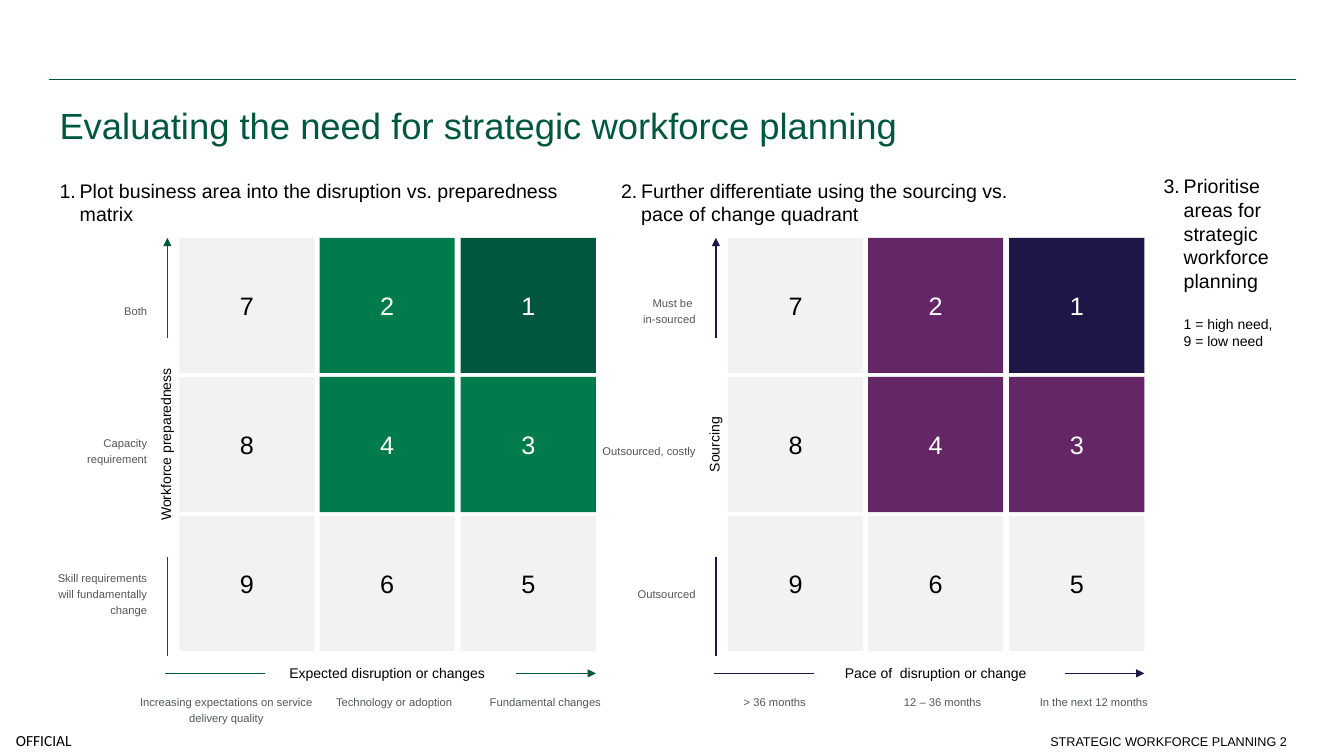
from lxml import etree
from pptx import Presentation, util as u
from pptx.dml.color import RGBColor
from pptx.enum import shapes, text
from pptx.oxml.ns import qn

PX = 9144  # 100 px to the inch
COLOURS = {
    "forest": "00573F", "green": "007B4B", "navy": "201547", "purple": "642667",
    "pale": "F2F2F2", "grey": "53565A", "black": "000000", "white": "FFFFFF",
}
LEFT, CENTRE, RIGHT = text.PP_ALIGN.LEFT, text.PP_ALIGN.CENTER, text.PP_ALIGN.RIGHT
TOP, MIDDLE, BOTTOM = text.MSO_ANCHOR.TOP, text.MSO_ANCHOR.MIDDLE, text.MSO_ANCHOR.BOTTOM


def px(*lengths):
    return [u.Emu(length * PX) for length in lengths]


def colour(name):
    return RGBColor.from_string(COLOURS[name])


def write(paragraph, words, size=10, ink="black", align=LEFT, font="Arial",
          spacing=None, before=None, after=None, indent=None, number=None):
    """Fill a paragraph; indent is in px, number starts a numbered list."""
    paragraph.text = words
    paragraph.alignment = align
    if spacing:
        paragraph.line_spacing = spacing
    if before:
        paragraph.space_before = u.Pt(before)
    if after:
        paragraph.space_after = u.Pt(after)
    properties = paragraph._p.get_or_add_pPr()
    if indent:
        properties.set("marL", str(indent * PX))
        properties.set("indent", str(-indent * PX if number else 0))
    if number:
        etree.SubElement(properties, qn("a:buAutoNum"),
                         type="arabicPeriod", startAt=str(number))
    for run in paragraph.runs:
        run.font.size = u.Pt(size)
        run.font.name = font
        run.font.color.rgb = colour(ink)
    for line_break in paragraph._p.findall(qn("a:br")):
        etree.SubElement(line_break, qn("a:rPr"), sz=str(size * 100))


class Board:
    """Holds the current slide and the place where new elements go."""

    def __init__(self, presentation):
        self.slide = presentation.slides.add_slide(presentation.slide_layouts[5])
        self.target = self.slide.shapes

    def start_group(self):
        self.target = self.slide.shapes.add_group_shape().shapes

    def end_group(self):
        self.target = self.slide.shapes

    def title(self, words, box, **style):
        shape = self.slide.shapes.title
        shape.left, shape.top, shape.width, shape.height = px(*box)
        shape.text_frame.auto_size = text.MSO_AUTO_SIZE.NONE
        shape.text_frame.vertical_anchor = TOP
        write(shape.text_frame.paragraphs[0], words, **style)

    def label(self, words, box, anchor=TOP, rotation=0, wrap=True, inset=0, **style):
        shape = self.target.add_textbox(*px(*box))
        shape.rotation = rotation
        frame = shape.text_frame
        frame.word_wrap = wrap
        frame.vertical_anchor = anchor
        frame.margin_left = frame.margin_right = u.Emu(inset * PX)
        frame.margin_top = frame.margin_bottom = u.Emu(inset * PX // 2)
        write(frame.paragraphs[0], words, **style)
        return frame

    def cell(self, words, box, fill, ink):
        shape = self.target.add_shape(shapes.MSO_SHAPE.RECTANGLE, *px(*box))
        shape.shadow.inherit = False
        shape.fill.solid()
        shape.fill.fore_color.rgb = colour(fill)
        shape.line.fill.background()
        shape.text_frame.vertical_anchor = MIDDLE
        write(shape.text_frame.paragraphs[0], words, size=18, ink=ink, align=CENTRE)

    def line(self, ends, ink, arrow=False):
        connector = self.target.add_connector(shapes.MSO_CONNECTOR.STRAIGHT, *px(*ends))
        connector.line.color.rgb = colour(ink)
        connector.line.width = u.Pt(1)
        if arrow:
            etree.SubElement(connector.line._get_or_add_ln(), qn("a:tailEnd"), type="triangle")
        etree.SubElement(connector._element.spPr, qn("a:effectLst"))

    def matrix(self, x, top_fill, mid_fill, axis_ink, y_title, x_title, rows, columns):
        """Draw a three by three matrix with axes; x shifts it to the right."""
        self.start_group()
        # Cells
        for row, ranks in enumerate(("721", "843", "965")):
            for column, rank in enumerate(ranks):
                fill = top_fill if rank == "1" else mid_fill if rank in "234" else "pale"
                box = (x + 178 + column * 279 // 2, 236 + row * 138, 134, 134)
                self.cell(rank, box, fill, "black" if fill == "pale" else "white")
        # Axes
        self.line((x + 166, 335, x + 166, 236), axis_ink, arrow=True)
        self.line((x + 166, 651, x + 166, 553), axis_ink)
        self.line((x + 512, 668, x + 591, 668), axis_ink, arrow=True)
        self.line((x + 164, 668, x + 263, 668), axis_ink)
        axis_style = dict(align=CENTRE, spacing=1.2)
        self.label(y_title, (x + 66, 429, 197, 24), rotation=270, **axis_style)
        self.label(x_title, (x + 266, 656, 236, 24), **axis_style)
        # Row and column labels
        small = dict(size=8, ink="grey", spacing=1.2)
        for words, (top, height) in zip(rows, ((240, 135), (377, 138), (519, 138))):
            self.label(words, (x + 48, top, 98, height), anchor=MIDDLE, align=RIGHT, **small)
        for words, (left, width) in zip(columns, ((130, 189), (322, 138), (466, 150))):
            self.label(words, (x + left, 687, width, 47), align=CENTRE, **small)
        self.end_group()


def main():
    presentation = Presentation()
    presentation.slide_width, presentation.slide_height = px(1333, 750)
    board = Board(presentation)

    # Header
    board.line((49, 79, 1285, 79), "forest")
    board.title("Evaluating the need for strategic workforce planning",
                (49, 89, 1235, 102), size=26, ink="forest", spacing=1.2)

    # Steps
    step = dict(size=14, after=9, indent=20)
    board.label("Plot business area into the disruption vs. preparedness matrix",
                (59, 177, 531, 59), number=1, **step)
    board.label("Further differentiate using the sourcing vs.\vpace of change quadrant",
                (616, 177, 519, 59), number=2, **step)
    priorities = board.label("Prioritise areas for strategic workforce planning",
                             (1154, 173, 131, 472), number=3, **step)
    write(priorities.add_paragraph(), "1 = high need,\v9 = low need", before=8, indent=20)

    # Matrices
    board.matrix(0, "forest", "green", "forest",
                 "Workforce preparedness", "Expected disruption or changes",
                 ("Both", "Capacity requirement",
                  "Skill requirements will fundamentally change"),
                 ("Increasing expectations on service delivery quality",
                  "Technology or adoption", "Fundamental changes"))
    board.matrix(544, "navy", "purple", "navy",
                 "Sourcing", "Pace of  disruption or change",
                 ("Must be \vin-sourced", "Outsourced, costly", "Outsourced"),
                 ("> 36 months", "12 – 36 months", "In the next 12 months"))

    # Footer
    board.label("OFFICIAL", (0, 719, 87, 31), anchor=MIDDLE, wrap=False,
                size=11, font="Calibri", align=CENTRE)
    board.label("STRATEGIC WORKFORCE PLANNING 2", (684, 709, 602, 39),
                anchor=BOTTOM, inset=10, size=9, align=RIGHT)

    presentation.save("out.pptx")


if __name__ == "__main__":
    main()
